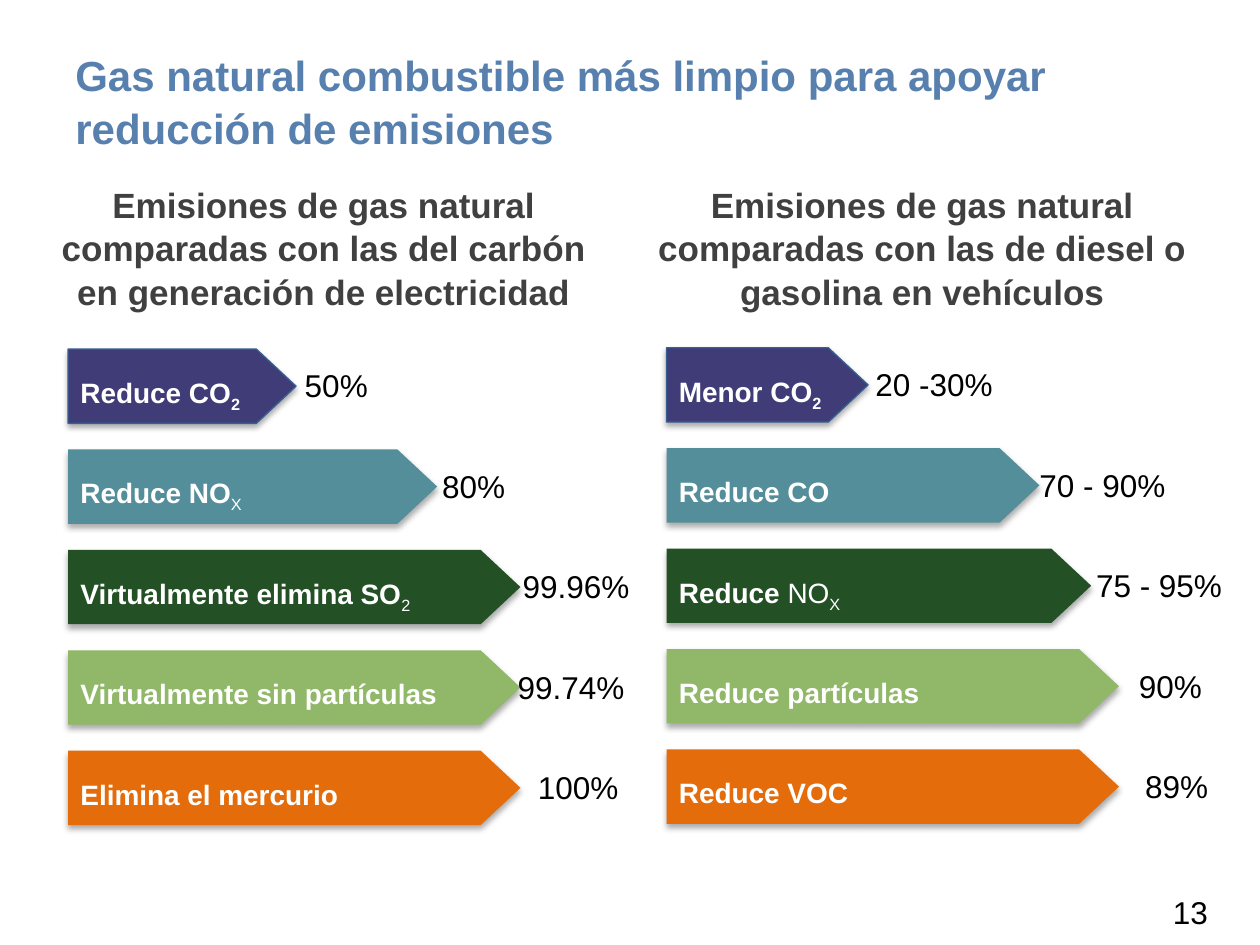
from lxml import etree
from pptx import Presentation
from pptx.dml.color import RGBColor
from pptx.enum.shapes import MSO_SHAPE
from pptx.enum.text import MSO_ANCHOR, PP_ALIGN
from pptx.oxml.ns import qn
from pptx.util import Inches, Pt

PENTAGON = MSO_SHAPE.PENTAGON
TOP, BOTTOM = MSO_ANCHOR.TOP, MSO_ANCHOR.BOTTOM
LEFT, CENTER = PP_ALIGN.LEFT, PP_ALIGN.CENTER

FONT = "Arial"
COLORS = {
    "title": "5780AE", "heading": "404040", "value": "000000", "label": "FFFFFF",
    "purple": "403C78", "teal": "548E9A", "dark": "245026",
    "light": "90B868", "orange": "E46C0A", "outline": "376092", "shadow": "000000",
}
ROW_COLORS = ["purple", "teal", "dark", "light", "orange"]
TITLE = "Gas natural combustible más limpio para apoyar reducción de emisiones"
PAGE_NUMBER = "13"
BOLD, PLAIN, BOLD_SUB, PLAIN_SUB = (True, 0), (False, 0), (True, -25000), (False, -25000)

# Each row: label runs, arrow width, value, value offset from arrow tip, value width
COLUMNS = [
    {
        "heading": "Emisiones de gas natural comparadas con las del carbón en generación de electricidad",
        "left": 0.54, "top": 2.77,
        "rows": [
            ([("Reduce CO", BOLD), ("2", BOLD_SUB)], 1.81, "50%", -0.03, 0.71),
            ([("Reduce NO", BOLD), ("X", PLAIN_SUB)], 2.93, "80%", -0.06, 0.71),
            ([("Virtualmente elimina SO", BOLD), ("2", PLAIN_SUB)], 3.59, "99.96%", -0.08, 1.06),
            ([("Virtualmente sin partículas", BOLD)], 3.59, "99.74%", -0.12, 1.06),
            ([("Elimina el mercurio", BOLD)], 3.59, "100%", 0.04, 0.85),
        ],
    },
    {
        "heading": "Emisiones de gas natural comparadas con las de diesel o gasolina en vehículos",
        "left": 5.29, "top": 2.76,
        "rows": [
            ([("Menor CO", BOLD), ("2", BOLD_SUB)], 1.6, "20 -30%", -0.04, 1.14),
            ([("Reduce CO", BOLD)], 2.96, "70 - 90%", -0.1, 1.21),
            ([("Reduce ", BOLD), ("NO", PLAIN), ("X", PLAIN_SUB)], 3.37, "75 - 95%", -0.06, 1.21),
            ([("Reduce partículas", BOLD)], 3.59, "90%", 0.06, 0.71),
            ([("Reduce VOC", BOLD)], 3.59, "89%", 0.11, 0.71),
        ],
    },
]
ROW_STEP, ARROW_HEIGHT = 0.797, 0.59
VALUE_DROP, VALUE_HEIGHT = 0.09, 0.4


def color(name):
    return RGBColor.from_string(COLORS[name])


def style(font, size, color_name, bold):
    font.name, font.size, font.bold = FONT, Pt(size), bold
    font.color.rgb = color(color_name)


def add_text(slide, box, text, size, color_name, bold=False, wrap=True,
             align=LEFT, anchor=TOP, inset=0.05, spacing=None):
    frame = slide.shapes.add_textbox(*map(Inches, box)).text_frame
    frame.word_wrap, frame.vertical_anchor = wrap, anchor
    frame.margin_top = Inches(inset)
    frame.text = text
    paragraph = frame.paragraphs[0]
    paragraph.alignment, paragraph.line_spacing = align, spacing
    style(paragraph.runs[0].font, size, color_name, bold)


def add_shadow(shape):
    shape.shadow.inherit = False
    effects = shape._element.spPr.find(qn("a:effectLst"))
    shadow = etree.SubElement(effects, qn("a:outerShdw"), blurRad=str(Pt(3.5)),
                              dist=str(Pt(2.2)), dir="5400000", rotWithShape="0")
    tint = etree.SubElement(shadow, qn("a:srgbClr"), val=COLORS["shadow"])
    etree.SubElement(tint, qn("a:alpha"), val="32000")


def add_arrow(slide, box, label, color_name):
    arrow = slide.shapes.add_shape(PENTAGON, *map(Inches, box))
    arrow.adjustments[0] = 0.535
    arrow.fill.solid()
    arrow.fill.fore_color.rgb = color(color_name)
    if color_name == "purple":
        arrow.line.color.rgb = color("outline")
        arrow.line.width = Pt(0.75)
    else:
        arrow.line.fill.background()
    add_shadow(arrow)
    frame = arrow.text_frame
    frame.word_wrap, frame.vertical_anchor = True, TOP
    frame.margin_top = Inches(0.21)
    paragraph = frame.paragraphs[0]
    paragraph.alignment = LEFT
    for text, (bold, baseline) in label:
        run = paragraph.add_run()
        run.text = text
        style(run.font, 16, "label", bold)
        if baseline:
            run._r.get_or_add_rPr().set("baseline", str(baseline))


def add_column(slide, column):
    left = column["left"]
    add_text(slide, (left - 0.25, 1.52, 4.56, 1.01), column["heading"], 20, "heading",
             bold=True, align=CENTER, anchor=BOTTOM, spacing=1.04)
    for index, (label, width, value, offset, value_width) in enumerate(column["rows"]):
        top = column["top"] + index * ROW_STEP
        add_arrow(slide, (left, top, width, ARROW_HEIGHT), label, ROW_COLORS[index])
        add_text(slide, (left + width + offset, top + VALUE_DROP, value_width, VALUE_HEIGHT),
                 value, 18, "value", wrap=False)


def main():
    presentation = Presentation()
    presentation.slide_width, presentation.slide_height = Inches(10), Inches(7.5)
    slide = presentation.slides.add_slide(presentation.slide_layouts[6])
    add_text(slide, (0.5, 0.3, 9, 0.75), TITLE, 24, "title", bold=True,
             inset=0.08, spacing=1.04)
    for column in COLUMNS:
        add_column(slide, column)
    add_text(slide, (9.21, 7.04, 0.61, 0.27), PAGE_NUMBER, 18, "value")
    presentation.save("out.pptx")


if __name__ == "__main__":
    main()
